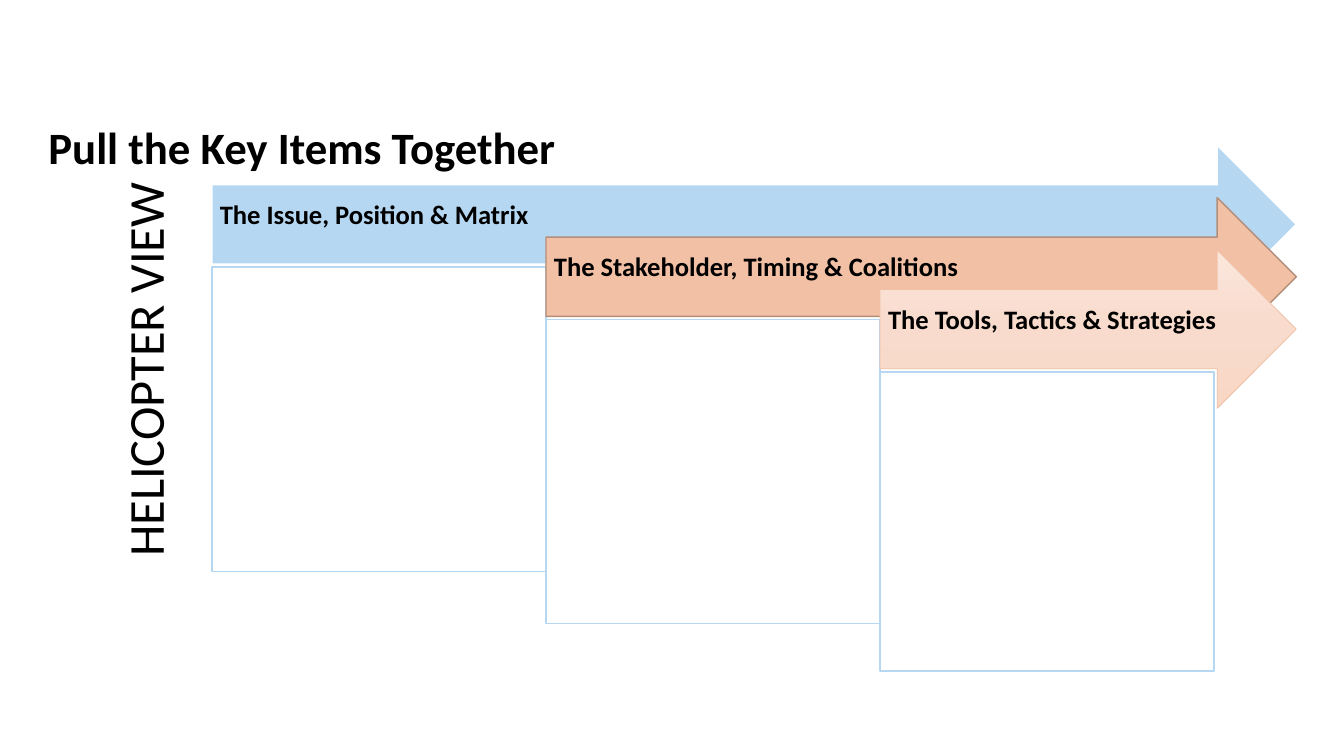
from copy import deepcopy

from pptx import Presentation
from pptx.dml.color import RGBColor
from pptx.enum.shapes import MSO_SHAPE
from pptx.enum.text import MSO_ANCHOR, MSO_AUTO_SIZE, PP_ALIGN
from pptx.util import Cm, Pt

RIGHT_ARROW = MSO_SHAPE.RIGHT_ARROW
RECTANGLE = MSO_SHAPE.RECTANGLE
TOP, MIDDLE = MSO_ANCHOR.TOP, MSO_ANCHOR.MIDDLE
LEFT, CENTER = PP_ALIGN.LEFT, PP_ALIGN.CENTER
NO_AUTOFIT = MSO_AUTO_SIZE.NONE

BLACK = RGBColor(0x00, 0x00, 0x00)
WHITE = RGBColor(0xFF, 0xFF, 0xFF)
BLUE = RGBColor(0xB5, 0xD7, 0xF2)
ORANGE = RGBColor(0xF2, 0xC0, 0xA5)
BROWN = RGBColor(0xB3, 0x8E, 0x7A)
PEACH_LIGHT = RGBColor(0xFB, 0xE6, 0xDC)
PEACH = RGBColor(0xF8, 0xDB, 0xCD)
PEACH_DARK = RGBColor(0xF9, 0xD7, 0xC5)


def write(shape, text, size, bold, alignment, frame_format):
    frame = shape.text_frame
    frame.text = text
    frame.word_wrap = True
    frame.auto_size = NO_AUTOFIT
    for name, value in frame_format.items():
        setattr(frame, name, value)
    paragraph = frame.paragraphs[0]
    paragraph.alignment = alignment
    paragraph.line_spacing = 0.9
    paragraph.space_before = Pt(0)
    font_format = {"name": "Calibri", "size": Pt(size), "bold": bold}
    for name, value in font_format.items():
        setattr(paragraph.runs[0].font, name, value)
    paragraph.runs[0].font.color.rgb = BLACK


def add_outlined(shapes, kind, box, colors, line_color, line_width):
    shape = shapes.add_shape(kind, *[Cm(length) for length in box])
    shape.shadow.inherit = False
    shape.line.color.rgb = line_color
    shape.line.width = Pt(line_width)
    if len(colors) == 1:
        shape.fill.solid()
        shape.fill.fore_color.rgb = colors[0]
        return
    shape.fill.gradient()
    shape.fill.gradient_angle = 270
    first_stop = shape._element.spPr.xpath("./a:gradFill/a:gsLst/a:gs")[0]
    first_stop.addnext(deepcopy(first_stop))
    for index, (stop, color) in enumerate(zip(shape.fill.gradient_stops, colors)):
        stop.position = index / (len(colors) - 1)
        stop.color.rgb = color


presentation = Presentation()
presentation.slide_width = Cm(33.87)
presentation.slide_height = Cm(19.05)
slide = presentation.slides.add_slide(presentation.slide_layouts[5])

title = slide.shapes.title
title_place = {"left": Cm(-0.79), "top": Cm(6.96), "width": Cm(10.49),
               "height": Cm(4.72), "rotation": 270}
for name, value in title_place.items():
    setattr(title, name, value)
write(title, "HELICOPTER VIEW", 36, False, CENTER,
      {"vertical_anchor": MIDDLE, "margin_bottom": Cm(1.6)})

first_left, first_top = 5.34, 3.66
step_right, step_down = 8.42, 1.32
arrow_tip = 32.67
arrow_height = 3.99
label_format = {"vertical_anchor": MIDDLE, "margin_left": Cm(0.2),
                "margin_top": Cm(0.2), "margin_right": Cm(0.71),
                "margin_bottom": Cm(0.64)}
stages = [
    ("The Issue, Position & Matrix", [BLUE], WHITE, 1, 7.67),
    ("The Stakeholder, Timing & Coalitions", [ORANGE], BROWN, 1, 7.67),
    ("The Tools, Tactics & Strategies", [PEACH_LIGHT, PEACH, PEACH_DARK],
     ORANGE, 0.5, 7.54),
]

diagram = slide.shapes.add_group_shape()
for index, (text, colors, line_color, line_width, panel_height) in enumerate(stages):
    left = first_left + index * step_right
    top = first_top + index * step_down
    width = arrow_tip - left
    add_outlined(diagram.shapes, RIGHT_ARROW, (left, top, width, arrow_height),
                 colors, line_color, line_width)
    label = diagram.shapes.add_textbox(
        Cm(left), Cm(top + arrow_height / 4), Cm(width - arrow_height / 4),
        Cm(arrow_height / 2))
    write(label, text, 19, True, LEFT, label_format)
    add_outlined(diagram.shapes, RECTANGLE,
                 (left, top + 3.07, step_right, panel_height), [WHITE], BLUE, 1)

headline = slide.shapes.add_textbox(Cm(0.97), Cm(3.05), Cm(19.76), Cm(1.19))
write(headline, "Pull the Key Items Together", 32, True, LEFT,
      {"vertical_anchor": TOP})

presentation.save("out.pptx")
